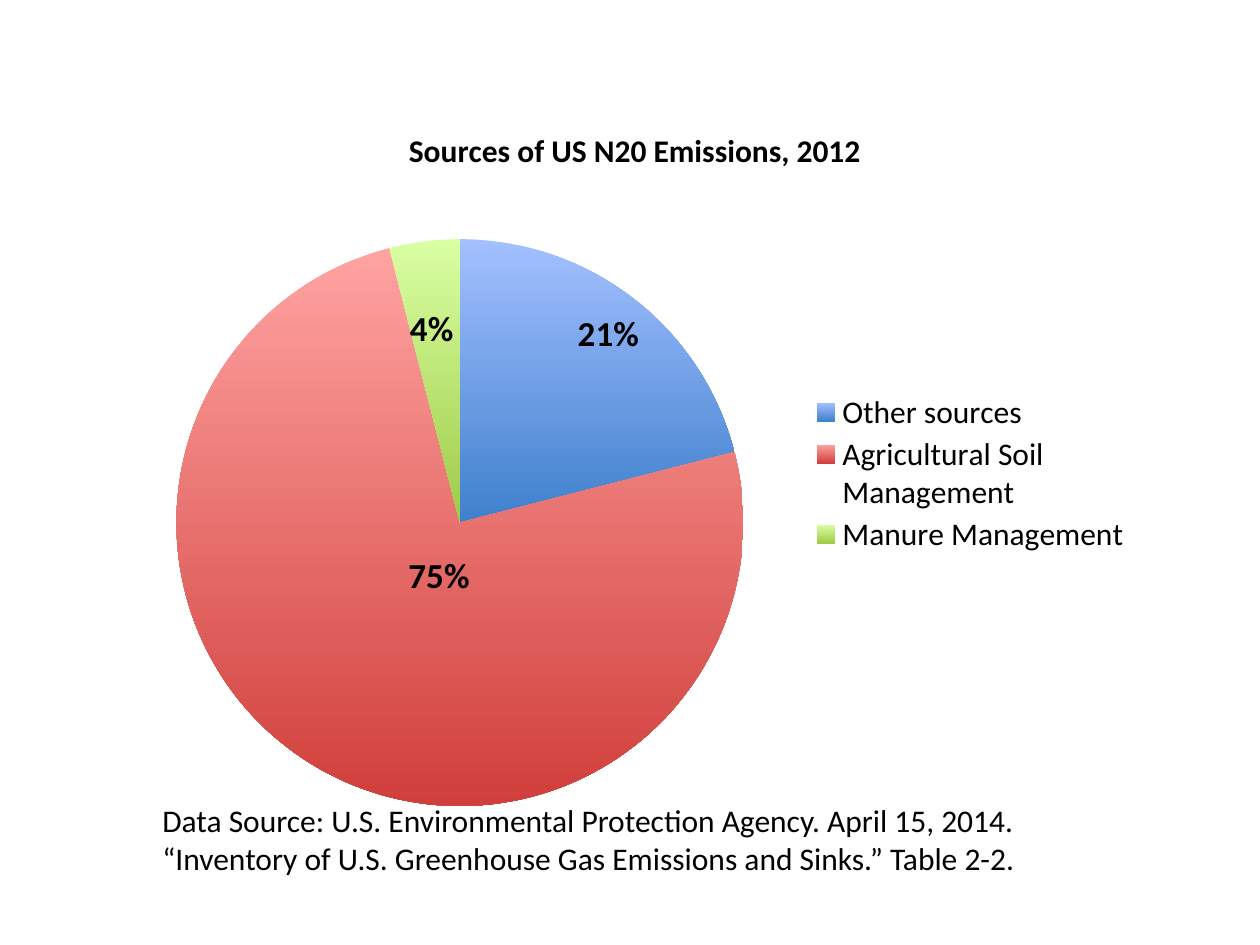
"""Build a slide with a pie chart of N20 emission sources and its data source."""
from pptx import Presentation
from pptx.chart.data import CategoryChartData
from pptx.dml.color import RGBColor
from pptx.enum.chart import XL_CHART_TYPE, XL_LABEL_POSITION, XL_LEGEND_POSITION
from pptx.enum.text import MSO_AUTO_SIZE
from pptx.oxml import parse_xml
from pptx.oxml.ns import nsdecls
from pptx.util import Inches, Pt

HUES = {
    "text": "000000",
    "blue": ("A3C0FF", "3F80CD"),
    "red": ("FFA3A1", "D03F3B"),
    "green": ("D9FFA3", "9FCB48"),
}
PARTS = [
    ("Other sources", 0.21, "blue", 0.06, -0.1),
    ("Agricultural Soil Management", 0.75, "red", 0.05, -0.09),
    ("Manure Management", 0.04, "green", -0.01, -0.07),
]


def write(frame, text, size=18, bold=False):
    run = frame.paragraphs[0].add_run()
    run.text = text
    run.font.size, run.font.bold, run.font.name = Pt(size), bold, "Calibri"
    run.font.color.rgb = RGBColor.from_string(HUES["text"])


def layout(edge=False, inner=False, **spots):
    tags = '<c:layoutTarget val="inner"/>' if inner else ""
    if edge:
        tags += '<c:xMode val="edge"/><c:yMode val="edge"/>'
    tags += "".join(f'<c:{key} val="{val}"/>' for key, val in spots.items())
    return parse_xml(f'<c:layout {nsdecls("c")}><c:manualLayout>{tags}</c:manualLayout></c:layout>')


deck = Presentation()
deck.slide_width, deck.slide_height = Inches(10), Inches(7.5)
slide = deck.slides.add_slide(deck.slide_layouts[6])

data = CategoryChartData(number_format="0%")
data.categories = [part[0] for part in PARTS]
data.add_series("Series 1", [part[1] for part in PARTS])
chart = slide.shapes.add_chart(
    XL_CHART_TYPE.PIE, Inches(0.91), Inches(0.73), Inches(8.18), Inches(6.05), data
).chart
chart.font.name, chart.font.size = "Calibri", Pt(10)
chart.font.color.rgb = RGBColor.from_string(HUES["text"])

chart.has_title = True
write(chart.chart_title.text_frame, "Sources of US N20 Emissions, 2012", bold=True)
title = chart.chart_title._element
for old in title.findall("{*}layout"):
    title.remove(old)
title.find("{*}tx").addnext(layout(edge=True, x=0.28, y=0.04))

chart.has_legend = True
legend = chart.legend
legend.position, legend.include_in_layout = XL_LEGEND_POSITION.RIGHT, False
legend.font.size, legend.font.name = Pt(18), "Calibri"
legend.font.color.rgb = RGBColor.from_string(HUES["text"])
for old in legend._element.findall("{*}layout"):
    legend._element.remove(old)
legend._element.find("{*}legendPos").addnext(layout(edge=True, x=0.67, y=0.39, w=0.32, h=0.22))

plot = chart.plots[0]
plot.vary_by_categories = True
area = plot._element.getparent()
for old in area.findall("{*}layout"):
    area.remove(old)
area.insert(0, layout(edge=True, inner=True, x=0.06, y=0.19, w=0.55, h=0.75))

series = plot.series[0]
labels = series.data_labels
labels.show_value = True
labels.number_format, labels.number_format_is_linked = "0%", False
labels.position = XL_LABEL_POSITION.CENTER
labels.font.size, labels.font.bold = Pt(20), True
labels.font.color.rgb = RGBColor.from_string(HUES["text"])
for num, (name, share, hue, right, down) in enumerate(PARTS):
    point = series.points[num]
    fill = point.format.fill
    fill.gradient()
    fill.gradient_angle = 270
    for stop, tint in zip(fill.gradient_stops, HUES[hue]):
        stop.color.rgb = RGBColor.from_string(tint)
    label = point.data_label
    label.font.size, label.font.bold = Pt(20), True
    label.font.color.rgb = RGBColor.from_string(HUES["text"])
    label.position = XL_LABEL_POSITION.CENTER
    node = labels._element.findall("{*}dLbl")[num]
    node.find("{*}idx").addnext(layout(x=right, y=down))
    for tag in ("showCatName", "showLegendKey", "showPercent", "showSerName"):
        node.find("{*}" + tag).set("val", "0")

note = slide.shapes.add_textbox(Inches(1.19), Inches(6.31), Inches(7.93), Inches(0.71)).text_frame
note.word_wrap, note.auto_size = True, MSO_AUTO_SIZE.SHAPE_TO_FIT_TEXT
write(
    note,
    "Data Source: U.S. Environmental Protection Agency. April 15, 2014. "
    "“Inventory of U.S. Greenhouse Gas Emissions and Sinks.” Table 2-2.",
)

deck.save("out.pptx")
